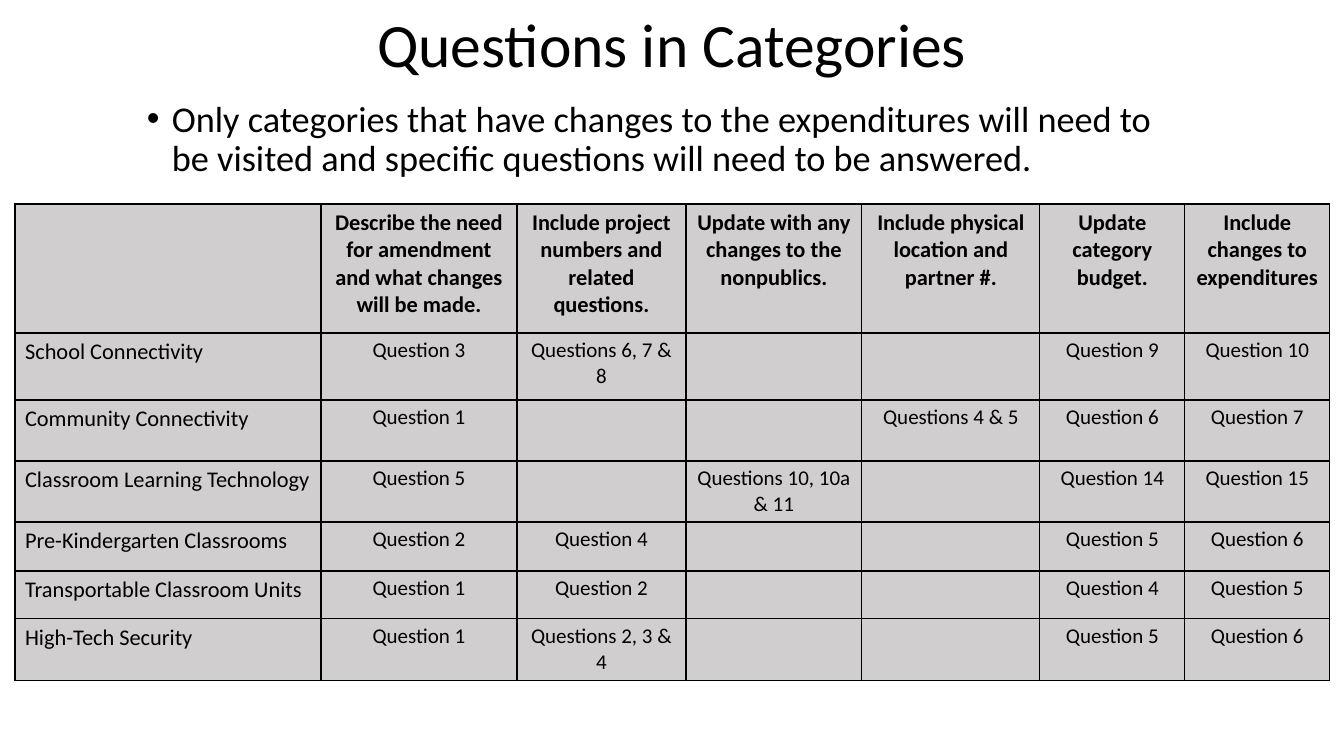
from lxml.etree import SubElement
from pptx import Presentation
from pptx.dml.color import RGBColor
from pptx.enum.text import MSO_ANCHOR, PP_ALIGN
from pptx.oxml.ns import qn
from pptx.util import Emu, Pt

BLACK = RGBColor(0x00, 0x00, 0x00)
GREY = RGBColor(0xD0, 0xCE, 0xCE)
FONT = "Calibri"
EMU_PER_PX = 914400 / 100.8

COLUMN_WIDTHS = [306, 196, 169, 176, 178, 145, 145]
ROW_HEIGHTS = [129, 67, 61, 61, 49, 48, 62]
ROWS = [
    ["", "Describe the need for amendment and what changes will be made.",
     "Include project numbers and related questions.",
     "Update with any changes to the nonpublics.",
     "Include physical location and partner #.",
     "Update category budget.", "Include changes to expenditures"],
    ["School Connectivity", "Question 3", "Questions 6, 7 & 8", "", "",
     "Question 9", "Question 10"],
    ["Community Connectivity", "Question 1", "", "", "Questions 4 & 5",
     "Question 6", "Question 7"],
    ["Classroom Learning Technology", "Question 5", "",
     "Questions 10, 10a & 11", "", "Question 14", "Question 15"],
    ["Pre-Kindergarten Classrooms", "Question 2", "Question 4", "", "",
     "Question 5", "Question 6"],
    ["Transportable Classroom Units", "Question 1", "Question 2", "", "",
     "Question 4", "Question 5"],
    ["High-Tech Security", "Question 1", "Questions 2, 3 & 4", "", "",
     "Question 5", "Question 6"],
]


def px(length):
    return Emu(round(length * EMU_PER_PX))


def write_text(frame, text, size, bold=False, align=PP_ALIGN.LEFT,
               line_spacing=None, space_before=None):
    para = frame.paragraphs[0]
    para.alignment = align
    para.line_spacing = line_spacing
    para.space_before = space_before
    span = para.add_run()
    span.text = text
    span.font.name = FONT
    span.font.size = Pt(size)
    span.font.bold = bold
    span.font.color.rgb = BLACK
    return para


def add_text_box(page, left, top, width, height, text, size,
                 anchor=MSO_ANCHOR.TOP, **text_format):
    box = page.shapes.add_textbox(px(left), px(top), px(width), px(height))
    frame = box.text_frame
    frame.word_wrap = True
    frame.vertical_anchor = anchor
    return write_text(frame, text, size, **text_format)


def add_bullet(para, indent):
    properties = para._p.get_or_add_pPr()
    properties.set("marL", str(px(indent)))
    properties.set("indent", str(-px(indent)))
    SubElement(properties, qn("a:buFont"), typeface="Arial")
    SubElement(properties, qn("a:buChar"), char="•")


def add_borders(cell):
    properties = cell._tc.get_or_add_tcPr()
    for position, side in enumerate(("lnL", "lnR", "lnT", "lnB")):
        line = SubElement(properties, qn(f"a:{side}"), w=str(Pt(1)))
        fill = SubElement(line, qn("a:solidFill"))
        SubElement(fill, qn("a:srgbClr"), val=str(BLACK))
        # Border lines come before the cell fill
        properties.insert(position, line)


def add_question_table(page, left, top):
    table = page.shapes.add_table(
        len(ROWS), len(COLUMN_WIDTHS), px(left), px(top),
        px(sum(COLUMN_WIDTHS)), px(sum(ROW_HEIGHTS))).table
    table.first_row = False
    table.horz_banding = False
    for column, width in zip(table.columns, COLUMN_WIDTHS):
        column.width = px(width)
    for row, height in zip(table.rows, ROW_HEIGHTS):
        row.height = px(height)

    for row_index, texts in enumerate(ROWS):
        for column_index, text in enumerate(texts):
            cell = table.cell(row_index, column_index)
            cell.fill.solid()
            cell.fill.fore_color.rgb = GREY
            add_borders(cell)
            is_header = row_index == 0
            is_category = column_index == 0
            if text:
                write_text(
                    cell.text_frame, text,
                    size=16 if is_header or is_category else 15,
                    bold=is_header,
                    align=PP_ALIGN.LEFT if is_category else PP_ALIGN.CENTER)


def main():
    deck = Presentation()
    deck.slide_width = px(1344)
    deck.slide_height = px(756)
    page = deck.slides.add_slide(deck.slide_layouts[6])

    # Title
    add_text_box(page, 0, 0, 1344, 96, "Questions in Categories", 44,
                 anchor=MSO_ANCHOR.MIDDLE, align=PP_ALIGN.CENTER,
                 line_spacing=0.9)

    # Introduction
    introduction = add_text_box(
        page, 137, 96, 1048, 101,
        "Only categories that have changes to the expenditures will need to "
        "be visited and specific questions will need to be answered.",
        25.9, line_spacing=0.9, space_before=Pt(10))
    add_bullet(introduction, 25)

    # Questions for each category
    add_question_table(page, 15, 204)

    deck.save("out.pptx")


if __name__ == "__main__":
    main()
